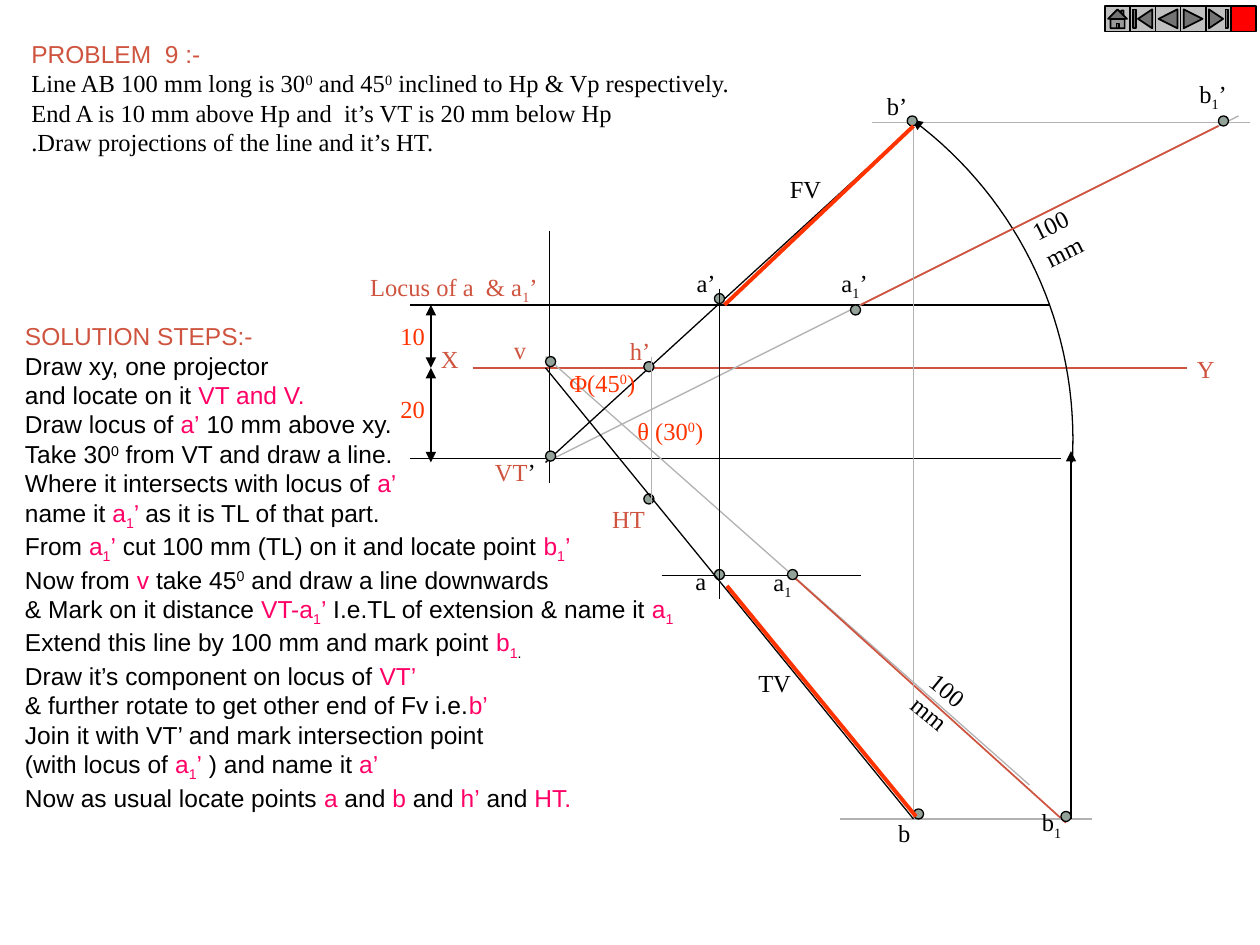
"""Build the slide for Problem 9: projections of a line from its VT, with solution steps."""
from lxml import etree
from pptx import Presentation
from pptx import util as u
from pptx.dml.color import RGBColor
from pptx.enum import shapes, text
from pptx.oxml.ns import qn

PX = 9144
BLACK = RGBColor(0x00, 0x00, 0x00)
WHITE = RGBColor(0xFF, 0xFF, 0xFF)
BROWN = RGBColor(0xCF, 0x54, 0x3F)
ORANGE = RGBColor(0xFF, 0x33, 0x00)
PINK = RGBColor(0xFF, 0x00, 0x66)
RED = RGBColor(0xFF, 0x00, 0x00)
GREY = RGBColor(0xB2, 0xB2, 0xB2)
SILVER = RGBColor(0xC0, 0xC0, 0xC0)
SAGE = RGBColor(0x93, 0xA2, 0x99)
SERIF, SANS = "Times New Roman", "Arial"
MSO = shapes.MSO_SHAPE

prs = Presentation()
prs.slide_width, prs.slide_height = 1000 * PX, 750 * PX
s = prs.slides.add_slide(prs.slide_layouts[6])


def add_line(x1, y1, x2, y2, color, width=0.75, ends=()):
    c = s.shapes.add_connector(shapes.MSO_CONNECTOR.STRAIGHT, x1 * PX, y1 * PX, x2 * PX, y2 * PX)
    c.line.color.rgb = color
    c.line.width = u.Pt(width)
    for end in ends:
        etree.SubElement(c.line._get_or_add_ln(), qn(f"a:{end}"), type="triangle")
    etree.SubElement(c._element.spPr, qn("a:effectLst"))


def add_text(x, y, w, h, content, color, accent=BLACK, font=SERIF, rotation=0):
    """Mark accents with *, a superscript character with ^ and a subscript one with _."""
    sp = s.shapes.add_textbox(x * PX, y * PX, w * PX, h * PX)
    sp.rotation = rotation
    tf = sp.text_frame
    tf.word_wrap = False
    tf.auto_size = text.MSO_AUTO_SIZE.SHAPE_TO_FIT_TEXT
    for i, row in enumerate(content.split("\n")):
        p = tf.add_paragraph() if i else tf.paragraphs[0]
        for j, part in enumerate(row.split("*")):
            for piece in part.replace("^", "|^").replace("_", "|_").split("|"):
                shift = {"^": "30000", "_": "-25000"}.get(piece[:1])
                runs = [(piece[1:2], shift), (piece[2:], None)] if shift else [(piece, None)]
                for words, baseline in runs:
                    if not words:
                        continue
                    r = p.add_run()
                    r.text = words
                    r.font.name, r.font.size = font, u.Pt(14)
                    r.font.color.rgb = accent if j % 2 else color
                    if baseline:
                        r._r.get_or_add_rPr().set("baseline", baseline)
    return tf


card = s.shapes.add_shape(MSO.ROUNDED_RECTANGLE, 10 * PX, 11 * PX, 980 * PX, 729 * PX)
card.adjustments[0] = 0.02
card.shadow.inherit = False
card.fill.solid()
card.fill.fore_color.rgb = WHITE
card.line.fill.background()

BOTH = ("headEnd", "tailEnd")
for args in [
    (375, 292, 942, 292, BROWN),
    (436, 183, 436, 383, BLACK),
    (325, 364, 842, 364, BLACK),
    (325, 242, 833, 242, BLACK),
    (342, 242, 342, 292, BLACK, 0.75, BOTH),
    (342, 292, 342, 367, BLACK, 0.75, BOTH),
    (433, 367, 983, 92, GREY),
    (433, 283, 817, 623, GREY),
    (629, 457, 846, 653, BROWN, 1),
    (667, 650, 867, 650, GREY),
    (992, 97, 692, 97, GREY),
    (850, 650, 850, 358, BLACK, 0.75, BOTH[1:]),
    (725, 100, 433, 367, BLACK),
    (525, 457, 683, 457, BLACK),
]:
    add_line(*args)

steps = 32
curve = []
for i in range(steps + 1):
    t = i / steps
    weights = ((1 - t) ** 3, 3 * t * (1 - t) ** 2, 3 * t ** 2 * (1 - t), t ** 3)
    curve.append(tuple(round(PX * sum(k * v for k, v in zip(weights, axis)))
                       for axis in ((724, 810, 857, 851), (95, 159, 261, 367))))
fb = s.shapes.build_freeform(*curve[0])
fb.add_line_segments(curve[1:], close=False)
arc = fb.convert_to_shape()
arc.shadow.inherit = False
arc.fill.background()
arc.line.color.rgb = BLACK
arc.line.width = u.Pt(0.75)
etree.SubElement(arc.line._get_or_add_ln(), qn("a:headEnd"), type="triangle")

points = [(433, 358), (433, 283), (675, 242), (967, 92), (842, 644), (625, 452),
          (720, 92), (567, 233), (725, 642), (567, 452), (511, 287), (511, 392)]
buttons = [MSO.ACTION_BUTTON_HOME, MSO.ACTION_BUTTON_BEGINNING,
           MSO.ACTION_BUTTON_BACK_OR_PREVIOUS, MSO.ACTION_BUTTON_FORWARD_OR_NEXT,
           MSO.ACTION_BUTTON_END, MSO.ACTION_BUTTON_CUSTOM]
marks = [(MSO.OVAL, x, y, 8, SAGE, 0.75) for x, y in points]
marks += [(kind, 877 + 20 * i, 5, 20, RED if kind == MSO.ACTION_BUTTON_CUSTOM else SILVER, 1)
          for i, kind in enumerate(buttons)]
for kind, x, y, size, fill, width in marks:
    sp = s.shapes.add_shape(kind, x * PX, y * PX, size * PX, size * PX)
    sp.shadow.inherit = False
    sp.fill.solid()
    sp.fill.fore_color.rgb = fill
    sp.line.color.rgb = BLACK
    sp.line.width = u.Pt(width)

for args in [
    (683, 242, 967, 100, BROWN, 1),
    (725, 100, 725, 650, GREY),
    (571, 229, 571, 475, BLACK),
    (725, 100, 575, 242, ORANGE, 2.25),
    (433, 292, 725, 650, BLACK),
    (727, 648, 577, 465, ORANGE, 2.25),
    (517, 283, 517, 400, GREY),
]:
    add_line(*args)

for x, y, w, label, color in [
    (340, 268, 34, "X", BROWN),
    (940, 276, 34, "Y", BROWN),
    (383, 358, 54, "VT*’*", BROWN),
    (398, 261, 30, "v", BROWN),
    (308, 250, 40, "10", ORANGE),
    (308, 308, 40, "20", ORANGE),
    (284, 211, 153, "Locus of a  & a_1’", BROWN),
    (496, 325, 74, "θ (30^0)", ORANGE),
    (442, 287, 73, "Φ(45^0)", ORANGE),
    (658, 208, 41, "a_1’", BLACK),
    (942, 58, 43, "b_1’", BLACK),
    (817, 636, 36, "b_1", BLACK),
    (604, 445, 35, "a_1", BLACK),
    (694, 67, 36, "b’", BLACK),
    (543, 208, 35, "a’", BLACK),
    (703, 644, 30, "b", BLACK),
    (542, 444, 29, "a", BLACK),
    (617, 133, 45, "FV", BLACK),
    (592, 525, 46, "TV", BLACK),
    (476, 395, 48, "HT", BROWN),
    (490, 262, 37, "h’", BROWN),
]:
    add_text(x, y, w, 33, label, color)
for x, y, angle in [(807, 154, 333.6), (724, 542, 39.3)]:
    add_text(x, y, 84, 33, "100 mm", BLACK, rotation=angle)

PROBLEM = """PROBLEM  9 :-
Line AB 100 mm long is 30^0 and 45^0 inclined to Hp & Vp respectively.
End A is 10 mm above Hp and  it’s VT is 20 mm below Hp
.Draw projections of the line and it’s HT."""
SOLUTION = """SOLUTION STEPS:-
Draw xy, one projector
and locate on it *VT and V.*
Draw locus of *a’* 10 mm above xy.
Take 30^0 from VT and draw a line.
Where it intersects with locus of *a’*
name it *a_1’ *as it is TL of that part.
From *a_1’* cut 100 mm (TL) on it and locate point *b_1’*
Now from *v* take 45^0 and draw a line downwards
& Mark on it distance *VT-a_1’* I.e.TL of extension & name it *a_1*
Extend this line by 100 mm and mark point* b_1*_.
Draw it’s component on locus of *VT’*
& further rotate to get other end of Fv i.e.*b’*
Join it with VT’ and mark intersection point
(with locus of *a_1’* ) and name it *a’*
Now as usual locate points *a* and *b* and* h’* and *HT.*"""
for x, y, w, h, content, font in [(15, 26, 582, 103, PROBLEM, SERIF),
                                  (10, 250, 540, 382, SOLUTION, SANS)]:
    tf = add_text(x, y, w, h, content, BLACK, PINK, font)
    heading = tf.paragraphs[0].runs[0].font
    heading.name = SANS
    heading.color.rgb = BROWN

prs.save("out.pptx")
